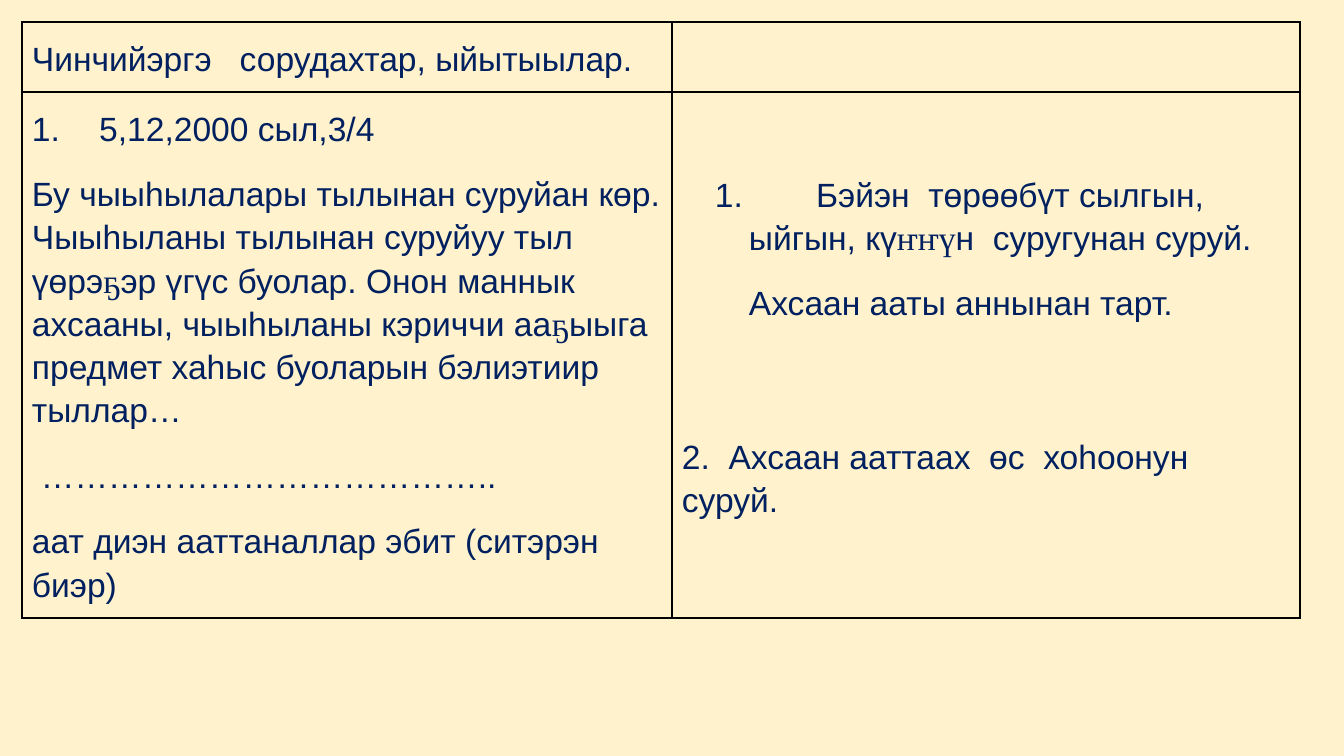
from lxml import etree
from pptx import Presentation
from pptx.dml.color import RGBColor
from pptx.oxml.ns import qn
from pptx.util import Pt

PX = 914400 / 134.4
BLANK_LAYOUT = 6
THEME = {
    "background": RGBColor.from_string("FFF2CC"),
    "text": RGBColor.from_string("002060"),
    "border": "000000",
    "border_pt": 1,
    "size": Pt(18),
    "fonts": ("Arial", "Times New Roman"),
}


def px(n):
    return round(n * PX)


def set_borders(cell):
    tcPr = cell._tc.get_or_add_tcPr()
    for i, side in enumerate(("lnL", "lnR", "lnT", "lnB")):
        ln = etree.Element(qn(f"a:{side}"), w=str(Pt(THEME["border_pt"])))
        fill = etree.SubElement(ln, qn("a:solidFill"))
        etree.SubElement(fill, qn("a:srgbClr"), val=THEME["border"])
        tcPr.insert(i, ln)


prs = Presentation()
prs.slide_width, prs.slide_height = px(1344), px(756)
s = prs.slides.add_slide(prs.slide_layouts[BLANK_LAYOUT])
s.background.fill.solid()
s.background.fill.fore_color.rgb = THEME["background"]

col_widths, row_heights = (650, 628), (70, 526)
table = s.shapes.add_table(2, 2, px(22), px(22), px(sum(col_widths)),
                           px(sum(row_heights))).table
table.first_row = table.horz_banding = False
for col, width in zip(table.columns, col_widths):
    col.width = px(width)
for row, height in zip(table.rows, row_heights):
    row.height = px(height)

# Each paragraph: text, left margin px, first-line indent px, space before pt.
# A bar switches between the two theme fonts.
paragraphs = {
    (0, 0): [("Чинчийэргэ   сорудахтар, ыйытыылар.", 0, 0, 12)],
    (0, 1): [],
    (1, 0): [
        ("1.\t5,12,2000 сыл,3/4", 0, 0, 12),
        ("Бу чыыhылалары тылынан суруйан көр. Чыыhыланы тылынан суруйуу тыл "
         "үөрэ|ҕ|эр үгүс буолар. Онон маннык ахсааны, чыыhыланы кэриччи "
         "аа|ҕ|ыыга предмет хаhыс буоларын бэлиэтиир тыллар…", 0, 0, 12),
        ("…………………………………..", 9, 0, 12),
        ("аат диэн ааттаналлар эбит (ситэрэн биэр)", 0, 0, 12),
    ],
    (1, 1): [
        ("1. \tБэйэн  төрөөбүт сылгын, ыйгын, кү|ҥҥү|н  суругунан суруй.",
         67, -34, 12),
        ("Ахсаан ааты аннынан тарт.", 67, 0, 12),
        ("2.  Ахсаан ааттаах  өс  хоhоонун  суруй.", 0, 0, 59),
    ],
}
top_margins = {(1, 1): 79}

for position, items in paragraphs.items():
    cell = table.cell(*position)
    cell.fill.background()
    set_borders(cell)
    margins = {"margin_left": 10, "margin_right": 10, "margin_bottom": 13,
               "margin_top": top_margins.get(position, 13)}
    for name, value in margins.items():
        setattr(cell, name, px(value))
    tf = cell.text_frame
    for i, (text, left, indent, before) in enumerate(items):
        p = tf.add_paragraph() if i else tf.paragraphs[0]
        p.line_spacing = 1.15
        p.space_before = Pt(before)
        pPr = p._p.get_or_add_pPr()
        pPr.set("marL", str(px(left)))
        pPr.set("indent", str(px(indent)))
        for k, part in enumerate(text.split("|")):
            r = p.add_run()
            r.text = part
            r.font.name = THEME["fonts"][k % 2]
            r.font.size = THEME["size"]
            r.font.color.rgb = THEME["text"]

prs.save("out.pptx")
